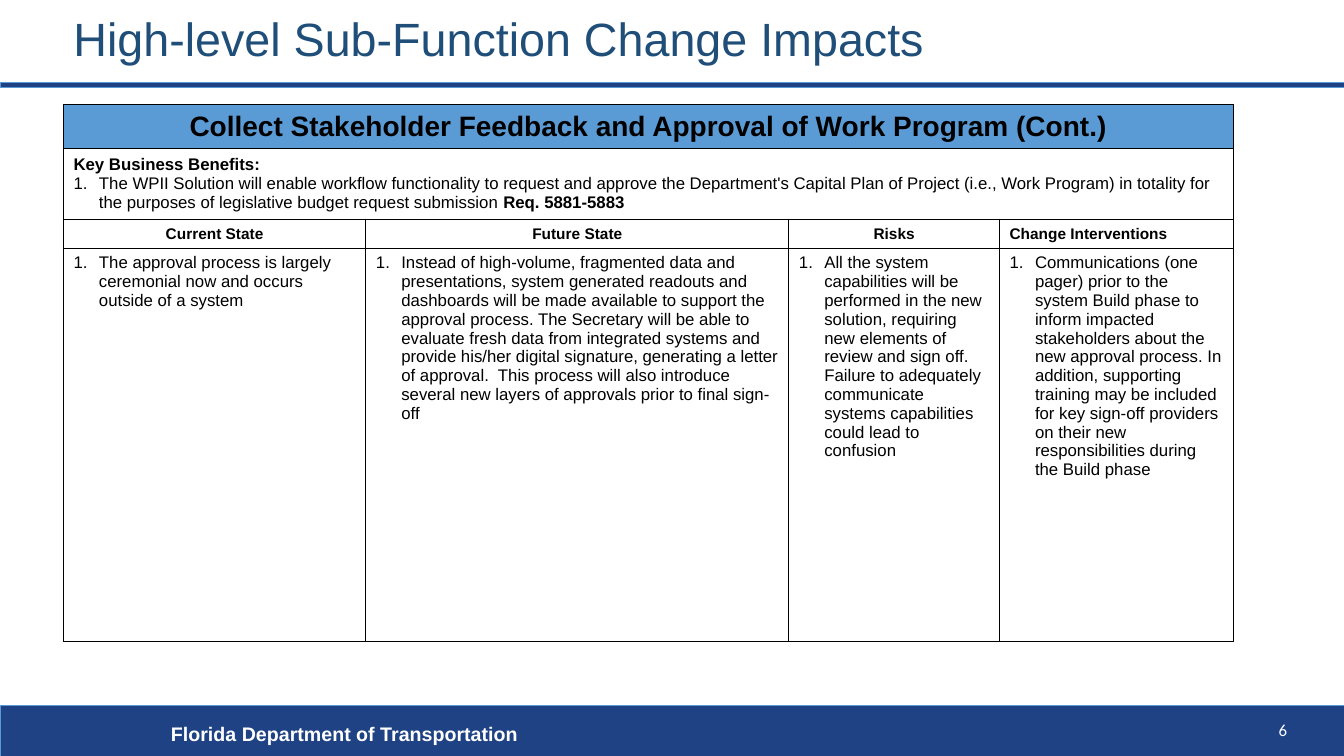
from lxml import etree
from pptx import Presentation
from pptx.dml.color import RGBColor
from pptx.enum import shapes, text
from pptx.oxml.ns import qn
from pptx.util import Cm, Pt

LEFT, MID, RIGHT = text.PP_ALIGN.LEFT, text.PP_ALIGN.CENTER, text.PP_ALIGN.RIGHT
NAVY, BLUE, WHITE, BLACK = "1F4284", "5B9BD5", "FFFFFF", "000000"


def rgb(code):
    return RGBColor.from_string(code)


def write(frame, words, size=12, bold=False, color=BLACK, font="Arial",
          align=LEFT, number=False, join=False, space=None):
    """Fill the empty last paragraph, extend it (join), or add another."""
    para = frame.paragraphs[-1]
    if para.runs and not join:
        para = frame.add_paragraph()
    if not join:
        para.alignment = align
        if space:
            para.line_spacing = space
        if number:
            props = para._p.get_or_add_pPr()
            props.set("marL", str(Cm(0.64)))
            props.set("indent", str(-Cm(0.64)))
            etree.SubElement(props, qn("a:buFont"), typeface="+mj-lt")
            etree.SubElement(props, qn("a:buAutoNum"), type="arabicPeriod")
    run = para.add_run()
    run.text = words
    run.font.name, run.font.size, run.font.bold = font, Pt(size), bold
    run.font.color.rgb = rgb(color)


prs = Presentation()
prs.slide_width, prs.slide_height = Cm(33.87), Cm(19.05)
slide = prs.slides.add_slide(prs.slide_layouts[6])

# Footer band and title rule
for top, high in ((17.78, 1.27), (2.08, 0.13)):
    band = slide.shapes.add_shape(
        shapes.MSO_SHAPE.RECTANGLE, 0, Cm(top), prs.slide_width, Cm(high))
    band.shadow.inherit = False
    band.fill.solid()
    band.fill.fore_color.rgb = rgb(NAVY)
    band.line.color.rgb = rgb(BLUE)
    band.line.width = Pt(0.5)

# Title, footer and page number
labels = (
    ("High-level Sub-Function Change Impacts", (1.6, 0.38, 23.06, 1.42),
     text.MSO_ANCHOR.MIDDLE, dict(size=33.3, color="1F4E79", space=0.8)),
    ("Florida Department of Transportation", (4.06, 18.06, 20.27, 0.86),
     text.MSO_ANCHOR.TOP, dict(size=14, bold=True, color=WHITE)),
    ("6", (29.82, 18.01, 2.87, 0.76),
     text.MSO_ANCHOR.TOP, dict(font="Calibri", color=WHITE, align=RIGHT)),
)
for words, place, anchor, style in labels:
    frame = slide.shapes.add_textbox(*map(Cm, place)).text_frame
    frame.word_wrap = True
    frame.vertical_anchor = anchor
    write(frame, words, **style)

# Table grid
wide = (7.62, 10.66, 5.31, 5.9)
tall = (1.1, 1.77, 0.74, 9.9)
table = slide.shapes.add_table(
    len(tall), len(wide), Cm(1.6), Cm(2.64), Cm(sum(wide)), Cm(sum(tall))).table
for col, size in zip(table.columns, wide):
    col.width = Cm(size)
for row, size in zip(table.rows, tall):
    row.height = Cm(size)

# Cell borders, fills and anchors
for r, row in enumerate(table.rows):
    for cell in row.cells:
        props = cell._tc.get_or_add_tcPr()
        for side in ("lnL", "lnR", "lnT", "lnB"):
            line = etree.SubElement(props, qn("a:" + side), w=str(Pt(1)))
            fill = etree.SubElement(line, qn("a:solidFill"))
            etree.SubElement(fill, qn("a:srgbClr"), val=BLACK)
        cell.fill.solid()
        cell.fill.fore_color.rgb = rgb(BLUE if r == 0 else WHITE)
        cell.vertical_anchor = (
            text.MSO_ANCHOR.TOP if r == 3 else text.MSO_ANCHOR.MIDDLE)

# Heading and benefits span all columns
for r in (0, 1):
    table.cell(r, 0).merge(table.cell(r, 3))
write(table.cell(0, 0).text_frame,
      "Collect Stakeholder Feedback and Approval of Work Program (Cont.)",
      size=20, bold=True, align=MID)
gains = table.cell(1, 0).text_frame
write(gains, "Key Business Benefits:", bold=True)
write(gains, "The WPII Solution will enable workflow functionality to request and "
      "approve the Department's Capital Plan of Project (i.e., Work Program) in "
      "totality for the purposes of legislative budget request submission ",
      number=True)
write(gains, "Req. 5881-5883", bold=True, join=True)

# Impact columns
impacts = (
    ("Current State", MID,
     "The approval process is largely ceremonial now and occurs outside of a system"),
    ("Future State", MID,
     "Instead of high-volume, fragmented data and presentations, system generated "
     "readouts and dashboards will be made available to support the approval "
     "process. The Secretary will be able to evaluate fresh data from integrated "
     "systems and provide his/her digital signature, generating a letter of "
     "approval.  This process will also introduce several new layers of approvals "
     "prior to final sign-off"),
    ("Risks", MID,
     "All the system capabilities will be performed in the new solution, requiring "
     "new elements of review and sign off. Failure to adequately communicate "
     "systems capabilities could lead to confusion"),
    ("Change Interventions", LEFT,
     "Communications (one pager) prior to the system Build phase to inform impacted "
     "stakeholders about the new approval process. In addition, supporting training "
     "may be included for key sign-off providers on their new responsibilities "
     "during the Build phase"),
)
for c, (head, align, body) in enumerate(impacts):
    write(table.cell(2, c).text_frame, head, size=11, bold=True, align=align)
    write(table.cell(3, c).text_frame, body, number=True)

prs.save("out.pptx")
